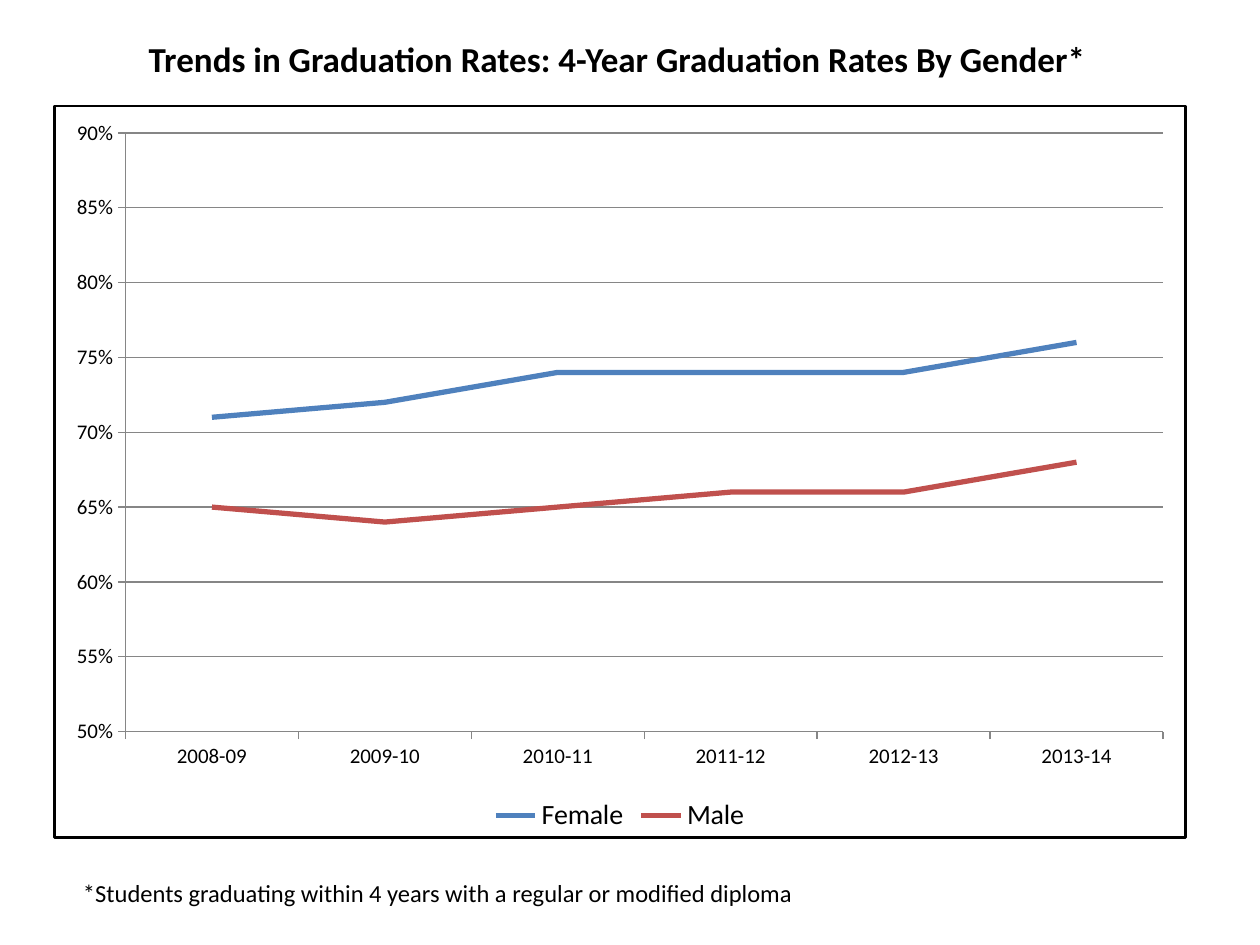
from lxml.etree import fromstring
from pptx import Presentation
from pptx.chart.data import CategoryChartData
from pptx.dml.color import RGBColor
from pptx.enum.chart import XL_CHART_TYPE, XL_LEGEND_POSITION, XL_TICK_MARK
from pptx.enum.text import MSO_ANCHOR, MSO_AUTO_SIZE, PP_ALIGN
from pptx.oxml.ns import nsdecls, qn
from pptx.util import Inches, Pt

COLORS = {
    "text": "000000",
    "background": "FFFFFF",
    "grid": "868686",
    "Female": "4F81BD",
    "Male": "C0504D",
}
YEARS = ["2008-09", "2009-10", "2010-11", "2011-12", "2012-13", "2013-14"]
RATES = {
    "Female": [0.71, 0.72, 0.74, 0.74, 0.74, 0.76],
    "Male": [0.65, 0.64, 0.65, 0.66, 0.66, 0.68],
}


class SlideBuilder:
    font_name = "Calibri"

    def __init__(self, slide):
        self.slide = slide

    def color(self, name):
        return RGBColor.from_string(COLORS[name])

    def style_font(self, font, size, bold=False):
        font.name = self.font_name
        font.size = Pt(size)
        font.bold = bold
        font.color.rgb = self.color("text")

    def style_line(self, line, color, width):
        line.color.rgb = self.color(color)
        line.width = Pt(width)

    def fill_text(self, shape, text, size, bold=False, wrap=True):
        frame = shape.text_frame
        frame.word_wrap = wrap
        frame.auto_size = MSO_AUTO_SIZE.SHAPE_TO_FIT_TEXT
        frame.vertical_anchor = MSO_ANCHOR.TOP
        paragraph = frame.paragraphs[0]
        paragraph.alignment = PP_ALIGN.LEFT
        run = paragraph.add_run()
        run.text = text
        self.style_font(run.font, size, bold)

    def title(self, text, left, top, width, height):
        shape = self.slide.shapes.title
        shape.left, shape.top = Inches(left), Inches(top)
        shape.width, shape.height = Inches(width), Inches(height)
        self.fill_text(shape, text, 20, bold=True)

    def footnote(self, text, left, top, width, height):
        shape = self.slide.shapes.add_textbox(
            Inches(left), Inches(top), Inches(width), Inches(height))
        self.fill_text(shape, text, 14, wrap=False)

    def border(self, chart, width):
        properties = fromstring(
            f'<c:spPr {nsdecls("c", "a")}>'
            f'<a:solidFill><a:srgbClr val="{COLORS["background"]}"/></a:solidFill>'
            f'<a:ln w="{Pt(width)}"><a:solidFill>'
            f'<a:srgbClr val="{COLORS["text"]}"/></a:solidFill></a:ln></c:spPr>')
        chart.element.find(qn("c:chart")).addnext(properties)

    def line_chart(self, categories, series_values, left, top, width, height):
        data = CategoryChartData(number_format="0%")
        data.categories = categories
        for name, values in series_values.items():
            data.add_series(name, values)
        chart = self.slide.shapes.add_chart(
            XL_CHART_TYPE.LINE, Inches(left), Inches(top),
            Inches(width), Inches(height), data).chart
        chart.has_title = False
        self.style_font(chart.font, 10)
        self.border(chart, 1.5)

        for axis in (chart.category_axis, chart.value_axis):
            axis.major_tick_mark = XL_TICK_MARK.OUTSIDE
            axis.minor_tick_mark = XL_TICK_MARK.NONE
            self.style_font(axis.tick_labels.font, 12)
            self.style_line(axis.format.line, "grid", 0.75)
        value_axis = chart.value_axis
        value_axis.minimum_scale = 0.5
        value_axis.maximum_scale = 0.9
        value_axis.major_unit = 0.05
        value_axis.tick_labels.number_format = "0%"
        value_axis.tick_labels.number_format_is_linked = False
        value_axis.has_major_gridlines = True
        self.style_line(value_axis.major_gridlines.format.line, "grid", 0.75)

        chart.plots[0].vary_by_categories = False
        for series in chart.plots[0].series:
            series.smooth = False
            self.style_line(series.format.line, series.name, 3)

        chart.has_legend = True
        chart.legend.position = XL_LEGEND_POSITION.BOTTOM
        chart.legend.include_in_layout = False
        self.style_font(chart.legend.font, 16)


def main():
    presentation = Presentation()
    presentation.slide_width = Inches(10)
    presentation.slide_height = Inches(7.5)
    title_only = presentation.slide_layouts[5]
    builder = SlideBuilder(presentation.slides.add_slide(title_only))
    builder.title("Trends in Graduation Rates: 4-Year Graduation Rates By Gender*",
                  1.08, 0.25, 7.83, 0.44)
    builder.line_chart(YEARS, RATES, 0.42, 0.83, 9, 5.83)
    builder.footnote(
        "*Students graduating within 4 years with a regular or modified diploma",
        0.56, 6.92, 5.89, 0.34)
    presentation.save("out.pptx")


if __name__ == "__main__":
    main()
